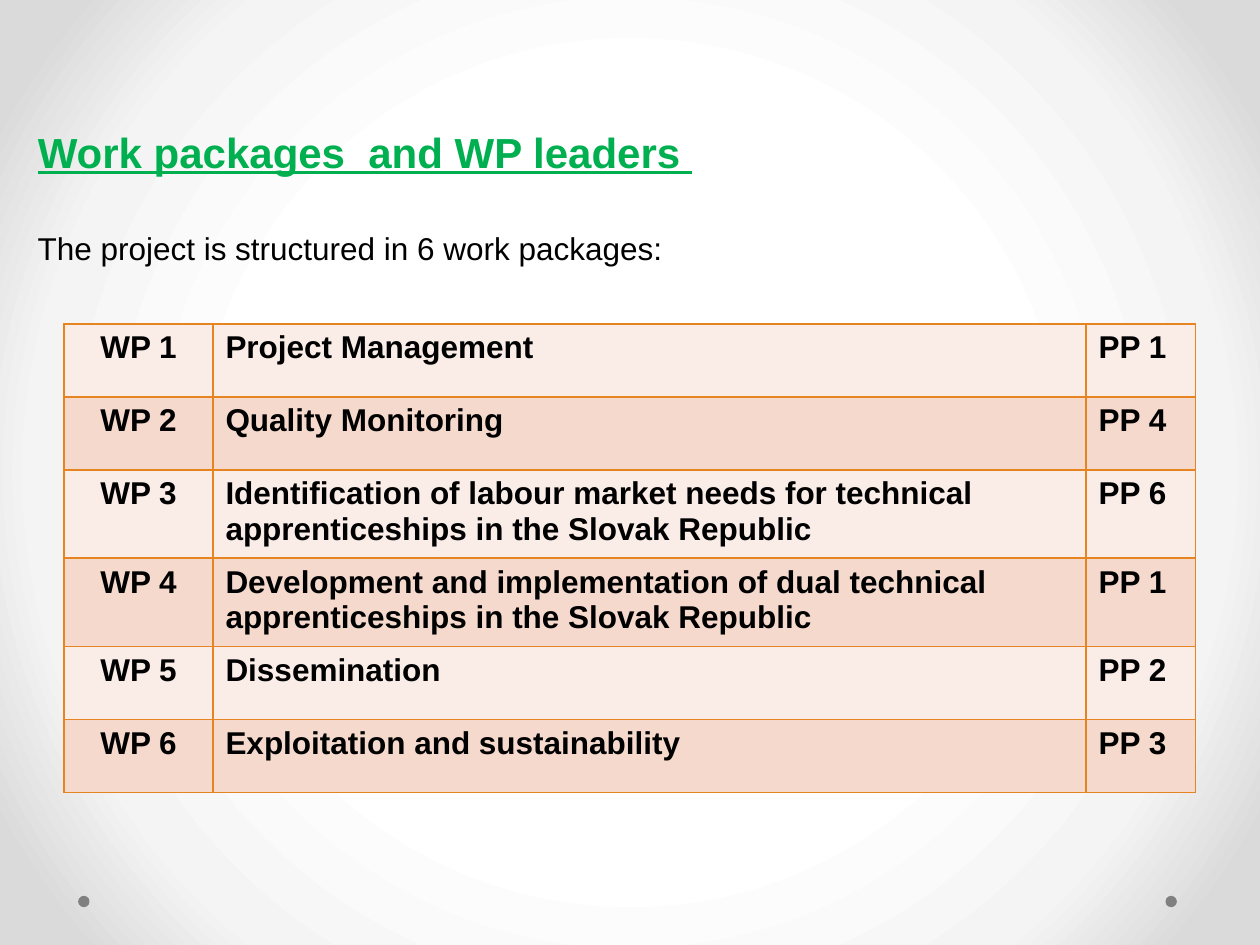
from pptx import Presentation, util as u
from pptx.dml.color import RGBColor
from pptx.enum import shapes, text
from pptx.oxml import parse_xml
from pptx.oxml.ns import nsdecls, qn

GREEN = RGBColor(0x00, 0xB0, 0x50)
BLACK = RGBColor(0x00, 0x00, 0x00)
GREY = RGBColor(0x80, 0x80, 0x80)
ORANGE = RGBColor(0xE6, 0x84, 0x22)
BANDS = [RGBColor(0xFA, 0xED, 0xE8), RGBColor(0xF5, 0xD9, 0xCD)]
GLOW = [(50, RGBColor(0xFF, 0xFF, 0xFF)), (76, RGBColor(0xF4, 0xF4, 0xF4)),
        (92, RGBColor(0xDA, 0xDA, 0xDA))]

COLS = [1.18, 6.93, 0.87]
ROW = 0.58
PACKAGES = [
    ("Project Management", "PP 1"),
    ("Quality Monitoring", "PP 4"),
    ("Identification of labour market needs for technical "
     "apprenticeships in the Slovak Republic", "PP 6"),
    ("Development and implementation of dual technical "
     "apprenticeships in the Slovak Republic", "PP 1"),
    ("Dissemination", "PP 2"),
    ("Exploitation and sustainability", "PP 3"),
]


def write(tf, words, size, color, bold=False, align=text.PP_ALIGN.LEFT):
    tf.word_wrap = True
    p = tf.paragraphs[0]
    p.alignment = align
    r = p.add_run()
    r.text = words
    r.font.name, r.font.size, r.font.bold = "Arial", u.Pt(size), bold
    r.font.color.rgb = color
    return r


def add_borders(cell):
    for i, side in enumerate(("lnL", "lnR", "lnT", "lnB")):
        cell._tc.get_or_add_tcPr().insert(i, parse_xml(
            f'<a:{side} {nsdecls("a")} w="{u.Pt(1)}"><a:solidFill>'
            f'<a:srgbClr val="{ORANGE}"/></a:solidFill></a:{side}>'))


prs = Presentation()
prs.slide_width, prs.slide_height = u.Inches(10), u.Inches(7.5)
s = prs.slides.add_slide(prs.slide_layouts[5])

# Background: radial glow
s.background.fill.gradient()
grad = s._element.find(".//" + qn("a:gradFill"))
stops = "".join(f'<a:gs pos="{pos * 1000}"><a:srgbClr val="{color}"/></a:gs>'
                for pos, color in GLOW)
grad.getparent().replace(grad, parse_xml(
    f'<a:gradFill {nsdecls("a")} rotWithShape="1"><a:gsLst>{stops}</a:gsLst>'
    '<a:path path="circle"><a:fillToRect l="50000" t="50000" r="50000" b="50000"/>'
    '</a:path></a:gradFill>'))

# Footer dots
for x in (0.62, 9.25):
    sp = s.shapes.add_shape(shapes.MSO_SHAPE.OVAL, u.Inches(x), u.Inches(7.11),
                            u.Inches(0.09), u.Inches(0.09))
    sp.shadow.inherit = False
    sp.fill.solid()
    sp.fill.fore_color.rgb = GREY
    sp.line.fill.background()

# Title
sp = s.shapes.title
sp.left, sp.top, sp.width, sp.height = map(u.Inches, (0.2, 0.95, 9.69, 0.5))
tf = sp.text_frame
tf.auto_size = text.MSO_AUTO_SIZE.NONE
tf.vertical_anchor = text.MSO_ANCHOR.TOP
write(tf, "Work packages  and WP leaders ", 24, GREEN, True).font.underline = True

# Introduction
sp = s.shapes.add_textbox(*map(u.Inches, (0.2, 1.77, 9.69, 0.4)))
write(sp.text_frame, "The project is structured in 6 work packages:", 18, BLACK)

# Work package table
table = s.shapes.add_table(len(PACKAGES), len(COLS), u.Inches(0.51), u.Inches(2.57),
                           u.Inches(sum(COLS)), u.Inches(ROW * len(PACKAGES))).table
table.first_row = table.horz_banding = False
for col, width in zip(table.columns, COLS):
    col.width = u.Inches(width)
for i, (name, leader) in enumerate(PACKAGES):
    for j, words in enumerate((f"WP {i + 1}", name, leader)):
        cell = table.cell(i, j)
        cell.fill.solid()
        cell.fill.fore_color.rgb = BANDS[i % 2]
        add_borders(cell)
        align = text.PP_ALIGN.LEFT if j else text.PP_ALIGN.CENTER
        write(cell.text_frame, words, 18, BLACK, True, align)

prs.save("out.pptx")
